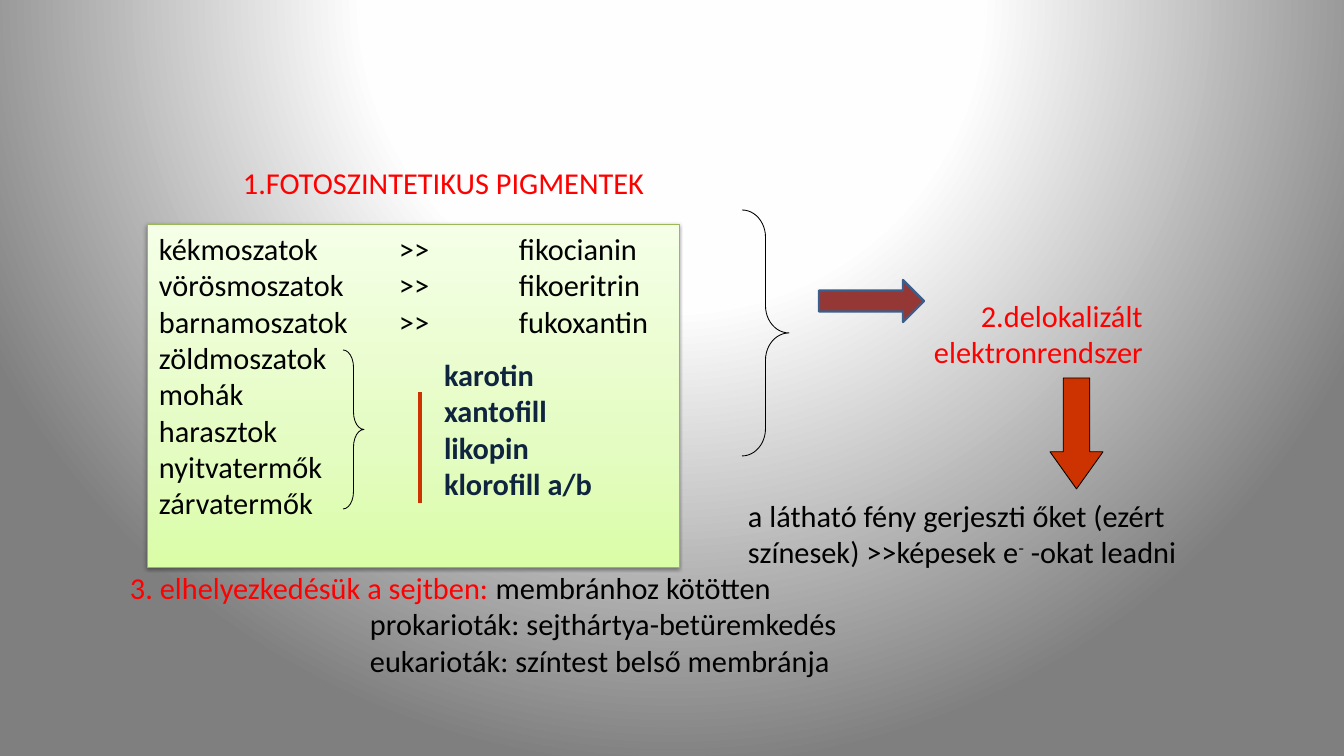
from pptx import Presentation
from pptx.dml.color import RGBColor
from pptx.enum.shapes import MSO_CONNECTOR, MSO_SHAPE
from pptx.enum.text import MSO_ANCHOR, PP_ALIGN
from pptx.oxml import parse_xml
from pptx.oxml.ns import nsdecls, qn
from pptx.util import Emu, Pt

PX = 914400 // 84
RED, BLACK, NAVY, RUST = "FF0000", "000000", "0F243E", "CC3300"


def px(value):
    return Emu(value * PX)


def rgb(value):
    return RGBColor.from_string(value)


def apply_format(target, values):
    for name, value in values.items():
        setattr(target, name, value)


class SlideBuilder:
    """Holds the text style and the current slide, and adds elements to it."""

    font = {"name": "Calibri", "size": Pt(26)}
    frame = {"margin_left": px(12), "margin_right": px(12),
             "margin_top": px(6), "margin_bottom": px(6)}
    tab_step = 120

    def __init__(self, slide):
        self.slide = slide

    def gradient(self, owner, element, stops, direction):
        owner.solid()
        solid = next(element.iter(qn("a:solidFill")))
        marks = "".join(
            f'<a:gs pos="{position * 1000}"><a:srgbClr val="{color}"/></a:gs>'
            for position, color in stops)
        solid.getparent().replace(solid, parse_xml(
            f'<a:gradFill {nsdecls("a")} rotWithShape="1">'
            f'<a:gsLst>{marks}</a:gsLst>{direction}</a:gradFill>'))

    def background(self, stops):
        self.gradient(
            self.slide.background.fill, self.slide._element, stops,
            '<a:path path="circle"><a:fillToRect l="50000" t="-80000" '
            'r="50000" b="180000"/></a:path>')

    def fill_text(self, shape, paragraphs, color, bold=False, align=PP_ALIGN.LEFT,
                  tabs=0, **frame):
        text_frame = shape.text_frame
        apply_format(text_frame, {"word_wrap": True, "vertical_anchor": MSO_ANCHOR.TOP,
                                  **self.frame, **frame})
        for index, runs in enumerate(paragraphs):
            paragraph = text_frame.add_paragraph() if index else text_frame.paragraphs[0]
            paragraph.alignment = align
            if tabs:
                stops = "".join(f'<a:tab pos="{px(self.tab_step * number)}" algn="l"/>'
                                for number in range(1, tabs + 1))
                paragraph._p.get_or_add_pPr().append(
                    parse_xml(f'<a:tabLst {nsdecls("a")}>{stops}</a:tabLst>'))
            for text, run_color, raised in self.runs(runs, color):
                run = paragraph.add_run()
                run.text = text
                apply_format(run.font, {**self.font, "bold": bold})
                run.font.color.rgb = rgb(run_color)
                if raised:
                    run._r.get_or_add_rPr().set("baseline", "30000")

    def runs(self, runs, color):
        if isinstance(runs, str):
            return [(runs, color, False)]
        return runs

    def text(self, box, paragraphs, color, **style):
        shape = self.slide.shapes.add_textbox(*map(px, box))
        self.fill_text(shape, paragraphs, color, **style)

    def shape(self, kind, box, line, width=0.75, fill=None, adjustments=()):
        shape = self.slide.shapes.add_shape(kind, *map(px, box))
        shape.shadow.inherit = False
        if fill:
            shape.fill.solid()
            shape.fill.fore_color.rgb = rgb(fill)
        else:
            shape.fill.background()
        shape.line.color.rgb = rgb(line)
        shape.line.width = Pt(width)
        for index, value in enumerate(adjustments):
            shape.adjustments[index] = value
        return shape

    def panel(self, box, stops, line, paragraphs, **style):
        shape = self.shape(MSO_SHAPE.RECTANGLE, box, line)
        self.gradient(shape.fill, shape._element, stops, '<a:lin ang="16200000" scaled="1"/>')
        shape._element.spPr.find(qn("a:effectLst")).append(parse_xml(
            f'<a:outerShdw {nsdecls("a")} blurRad="{Pt(3.1)}" dist="{Pt(1.6)}" '
            'dir="5400000" rotWithShape="0"><a:srgbClr val="000000">'
            '<a:alpha val="38000"/></a:srgbClr></a:outerShdw>'))
        self.fill_text(shape, paragraphs, BLACK, **style)

    def line(self, start, end, color, width):
        connector = self.slide.shapes.add_connector(
            MSO_CONNECTOR.STRAIGHT, *map(px, start + end))
        connector._element.spPr.append(parse_xml(f'<a:effectLst {nsdecls("a")}/>'))
        connector.line.color.rgb = rgb(color)
        connector.line.width = Pt(width)


def main():
    presentation = Presentation()
    presentation.slide_width, presentation.slide_height = px(1344), px(756)
    builder = SlideBuilder(presentation.slides.add_slide(presentation.slide_layouts[6]))
    builder.background([(0, "FFFFFF"), (40, "FEFEFE"), (100, "7F7F7F")])

    builder.text((231, 84, 441, 123), ["1.FOTOSZINTETIKUS PIGMENTEK"], RED,
                 vertical_anchor=MSO_ANCHOR.BOTTOM)
    pigments = {"kékmoszatok": "fikocianin", "vörösmoszatok": "fikoeritrin",
                "barnamoszatok": "fukoxantin"}
    plants = ["zöldmoszatok", "mohák", "harasztok", "nyitvatermők", "zárvatermők"]
    builder.panel((147, 224, 532, 343),
                  [(0, "DAFDA7"), (35, "E4FCC2"), (100, "F5FFE7")], "98B955",
                  [f"{alga} \t>> \t{pigment}" for alga, pigment in pigments.items()] + plants,
                  tabs=3)
    builder.shape(MSO_SHAPE.RIGHT_BRACE, (343, 350, 21, 159), BLACK, adjustments=(0.83, 0.5))
    builder.text((432, 350, 175, 159), ["karotin", "xantofill", "likopin", "klorofill a/b"],
                 NAVY, bold=True)
    builder.shape(MSO_SHAPE.RIGHT_BRACE, (742, 210, 47, 246), BLACK, adjustments=(0.58, 0.5))
    builder.text((875, 291, 280, 86), ["2.delokalizált", "elektronrendszer"], RED,
                 align=PP_ALIGN.RIGHT)
    builder.text((736, 491, 457, 86), [
        "a látható fény gerjeszti őket (ezért",
        [("színesek) >>képesek e", BLACK, False), ("-", BLACK, True),
         (" -okat leadni", BLACK, False)],
    ], BLACK, word_wrap=False)
    builder.text((118, 563, 1092, 123), [
        [("3. elhelyezkedésük a sejtben: ", RED, False),
         ("membránhoz kötötten", BLACK, False)],
        "\t\tprokarioták: sejthártya-betüremkedés",
        "\t\teukarioták: színtest belső membránja",
    ], BLACK, tabs=2)
    builder.line((420, 392), (420, 503), RUST, 3)
    builder.shape(MSO_SHAPE.DOWN_ARROW, (1050, 378, 53, 111), BLACK, fill=RUST,
                  adjustments=(0.5, 0.7))
    builder.shape(MSO_SHAPE.RIGHT_ARROW, (819, 280, 105, 42), "3A5F8C", width=2, fill="953735")
    presentation.save("out.pptx")


if __name__ == "__main__":
    main()
